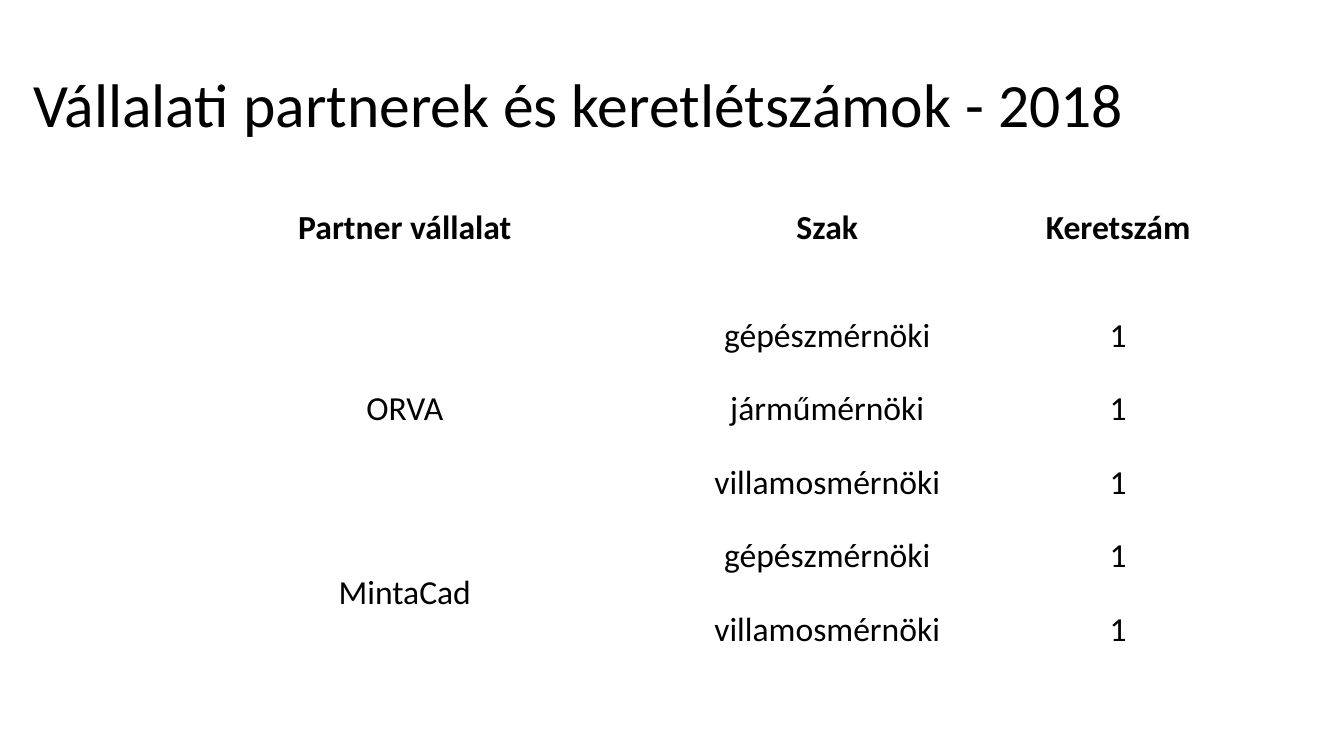
from lxml import etree
from pptx import Presentation
from pptx.dml.color import RGBColor
from pptx.enum.text import MSO_ANCHOR, PP_ALIGN
from pptx.oxml.ns import qn
from pptx.util import Inches, Pt

MIDDLE = MSO_ANCHOR.MIDDLE
CENTER = PP_ALIGN.CENTER
BLACK = RGBColor(0x00, 0x00, 0x00)
WHITE = RGBColor(0xFF, 0xFF, 0xFF)


def style_text(paragraph, size, bold=False):
    font = paragraph.font
    for name, value in {"name": "Calibri", "size": Pt(size), "bold": bold}.items():
        setattr(font, name, value)
    font.color.rgb = BLACK


def add_borders(cell, color, width):
    properties = cell._tc.get_or_add_tcPr()
    for side in ("lnL", "lnR", "lnT", "lnB"):
        line = etree.SubElement(properties, qn(f"a:{side}"), w=str(width))
        fill = etree.SubElement(line, qn("a:solidFill"))
        etree.SubElement(fill, qn("a:srgbClr"), val=str(color))


presentation = Presentation()
presentation.slide_width = Inches(13.33)
presentation.slide_height = Inches(7.5)
slide = presentation.slides.add_slide(presentation.slide_layouts[6])

# Title
title = slide.shapes.add_textbox(Inches(0.23), Inches(0.34), Inches(11.5), Inches(1.45))
title.text_frame.word_wrap = True
title.text_frame.vertical_anchor = MIDDLE
heading = title.text_frame.paragraphs[0]
heading.text = "Vállalati partnerek és keretlétszámok - 2018"
heading.line_spacing = 0.9
style_text(heading, 44)

# Partner quotas: each company spans the rows of its majors
headers = ("Partner vállalat", "Szak", "Keretszám")
partners = {
    "ORVA": [("gépészmérnöki", 1), ("járműmérnöki", 1), ("villamosmérnöki", 1)],
    "MintaCad": [("gépészmérnöki", 1), ("villamosmérnöki", 1)],
}
column_widths = (4.35, 4.03, 1.74)
row_heights = [1.4] + [0.73] * sum(len(majors) for majors in partners.values())

quotas = slide.shapes.add_table(
    len(row_heights), len(headers), Inches(1.84), Inches(1.56),
    Inches(sum(column_widths)), Inches(sum(row_heights)),
).table
for column, width in zip(quotas.columns, column_widths):
    column.width = Inches(width)
for row, height in zip(quotas.rows, row_heights):
    row.height = Inches(height)

# Table content
for column, header in enumerate(headers):
    quotas.cell(0, column).text = header
row = 1
for company, majors in partners.items():
    quotas.cell(row, 0).merge(quotas.cell(row + len(majors) - 1, 0))
    quotas.cell(row, 0).text = company
    for major, quota in majors:
        quotas.cell(row, 1).text = major
        quotas.cell(row, 2).text = str(quota)
        row += 1

# Table format
cell_format = {
    "vertical_anchor": MIDDLE,
    "margin_left": Inches(0.01),
    "margin_right": Inches(0.01),
    "margin_top": Inches(0.01),
    "margin_bottom": Inches(0),
}
for row_index, row in enumerate(quotas.rows):
    for cell in row.cells:
        for name, value in cell_format.items():
            setattr(cell, name, value)
        add_borders(cell, WHITE, Pt(1))
        cell.fill.background()
        label = cell.text_frame.paragraphs[0]
        label.alignment = CENTER
        style_text(label, 24, bold=row_index == 0)

presentation.save("out.pptx")
